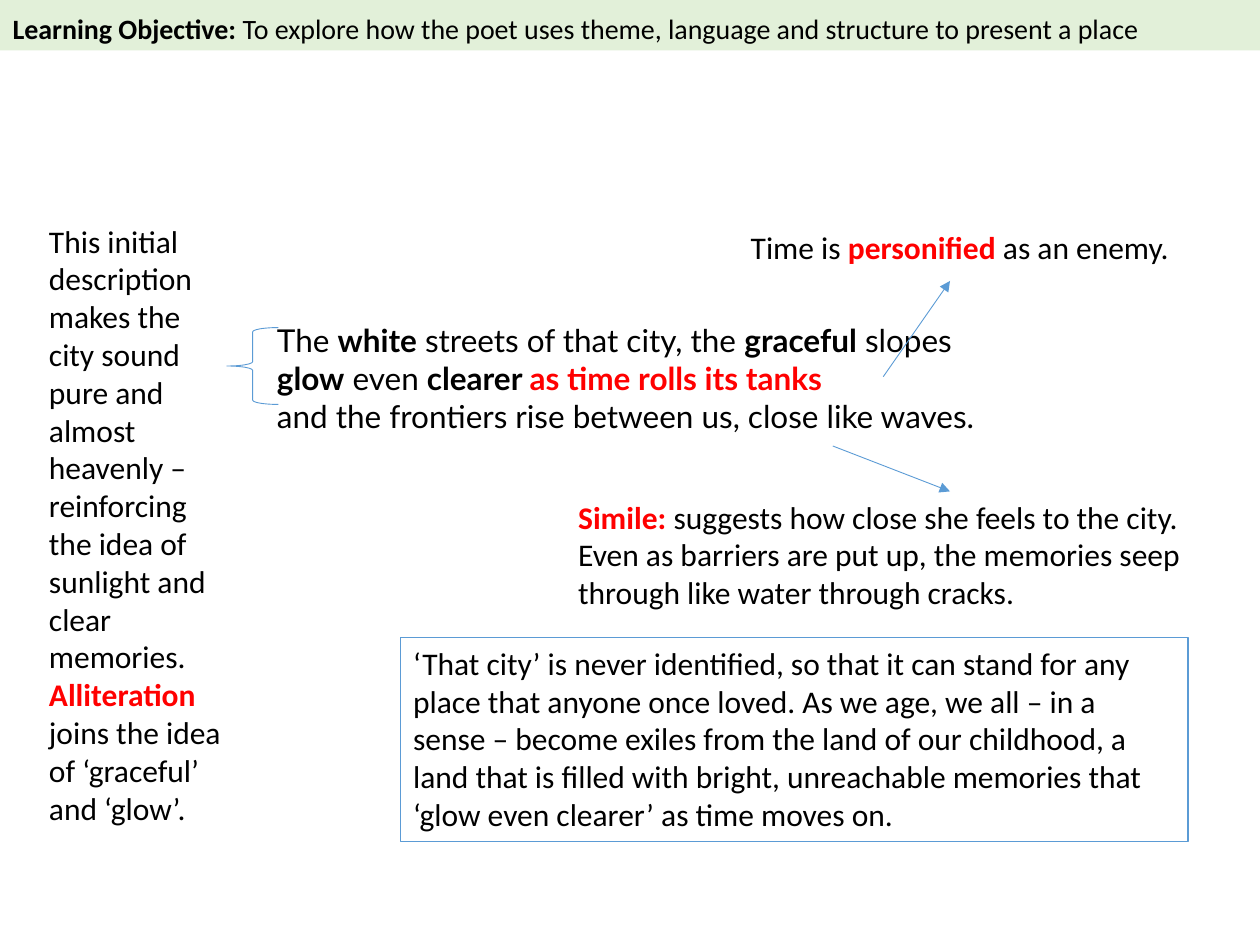
from lxml.etree import SubElement
from pptx import Presentation
from pptx.dml.color import RGBColor
from pptx.enum.shapes import MSO_CONNECTOR, MSO_SHAPE
from pptx.enum.text import MSO_ANCHOR, MSO_AUTO_SIZE, PP_ALIGN
from pptx.oxml.ns import qn
from pptx.util import Inches, Pt

BLACK, RED, BLUE, GREEN = "000000", "FF0000", "5B9BD5", "E2F0D9"


def paint(color, code):
    color.rgb = RGBColor.from_string(code)


def bold(text):
    return text, True, BLACK


def red(text):
    return text, True, RED


def write(shape, *paras, size=18, font="Calibri", top=0.05):
    """Fill a shape with paragraphs, each a list of plain strings or styled runs."""
    frame = shape.text_frame
    frame.word_wrap = True
    frame.auto_size = MSO_AUTO_SIZE.NONE
    frame.vertical_anchor = MSO_ANCHOR.TOP
    frame.margin_left = frame.margin_right = Inches(0.1)
    frame.margin_top, frame.margin_bottom = Inches(top), Inches(0.05)
    for i, runs in enumerate(paras):
        para = frame.add_paragraph() if i else frame.paragraphs[0]
        para.alignment = PP_ALIGN.LEFT
        for item in runs:
            text, strong, code = (item, False, BLACK) if isinstance(item, str) else item
            for j, part in enumerate(text.split("\n")):
                if j:
                    para.add_line_break()
                if part:
                    run = para.add_run()
                    run.text = part
                    run.font.name, run.font.size = font, Pt(size)
                    run.font.bold = strong
                    paint(run.font.color, code)


def add_text(slide, box, *paras, **style):
    write(slide.shapes.add_textbox(*map(Inches, box)), *paras, **style)


def outline(slide, kind, box, width):
    shape = slide.shapes.add_shape(kind, *map(Inches, box))
    shape.shadow.inherit = False
    shape.fill.background()
    paint(shape.line.color, BLUE)
    shape.line.width = Pt(width)
    return shape


def arrow(slide, start, end):
    line = slide.shapes.add_connector(
        MSO_CONNECTOR.STRAIGHT, *map(Inches, (*start, *end)))
    paint(line.line.color, BLUE)
    line.line.width = Pt(0.5)
    props = line.element.spPr
    SubElement(props.find(qn("a:ln")), qn("a:tailEnd"), type="triangle")
    SubElement(props, qn("a:effectLst"))


def banner(slide, box):
    title = slide.shapes.title
    title.left, title.top, title.width, title.height = map(Inches, box)
    title.fill.solid()
    paint(title.fill.fore_color, GREEN)
    write(title, [
        bold("Learning Objective: "),
        "To explore how the poet uses theme, language and structure to present a place",
    ], size=16, top=0.09)


def poem(slide, box):
    add_text(slide, box, [
        "The ", bold("white"), " streets of that city, the ", bold("graceful"),
        " slopes\n", bold("glow"), " even ", bold("clearer "),
        red("as time rolls its tanks\n"),
        "and the frontiers rise between us, close like waves.",
    ], font="Lato")
    left, top = box[:2]
    outline(slide, MSO_SHAPE.LEFT_BRACE, (left - 0.3, top + 0.1, 0.41, 0.61), 0.5)


def notes(slide):
    """Place the comments around the poem, with their arrows."""
    add_text(slide, (0.29, 1.71, 1.59, 4.95), [
        "This initial description makes the city sound pure and almost heavenly – "
        "reinforcing the idea of sunlight and clear memories.",
    ], [red("Alliteration"), " joins the idea of ‘graceful’ and ‘glow’."])
    add_text(slide, (5.86, 1.76, 3.94, 0.4),
             ["Time is ", red("personified"), " as an enemy."])
    arrow(slide, (7.01, 2.99), (7.54, 2.23))
    add_text(slide, (4.49, 3.9, 5.02, 1.01), [
        red("Simile: "),
        "suggests how close she feels to the city. Even as barriers are put up, "
        "the memories seep through like water through cracks.",
    ])
    arrow(slide, (6.61, 3.54), (7.54, 3.9))


def summary(slide, box):
    write(outline(slide, MSO_SHAPE.RECTANGLE, box, 0.75), [
        "‘That city’ is never identified, so that it can stand for any place that "
        "anyone once loved. As we age, we all – in a sense – become exiles from the "
        "land of our childhood, a land that is filled with bright, unreachable "
        "memories that ‘glow even clearer’ as time moves on.",
    ])


def main():
    deck = Presentation()
    deck.slide_width, deck.slide_height = Inches(10), Inches(7.5)
    slide = deck.slides.add_slide(deck.slide_layouts[5])
    banner(slide, (0, 0, 10, 0.4))
    poem(slide, (2.1, 2.5, 6.36, 1.31))
    notes(slide)
    summary(slide, (3.18, 5.06, 6.25, 1.62))
    deck.save("out.pptx")


if __name__ == "__main__":
    main()
